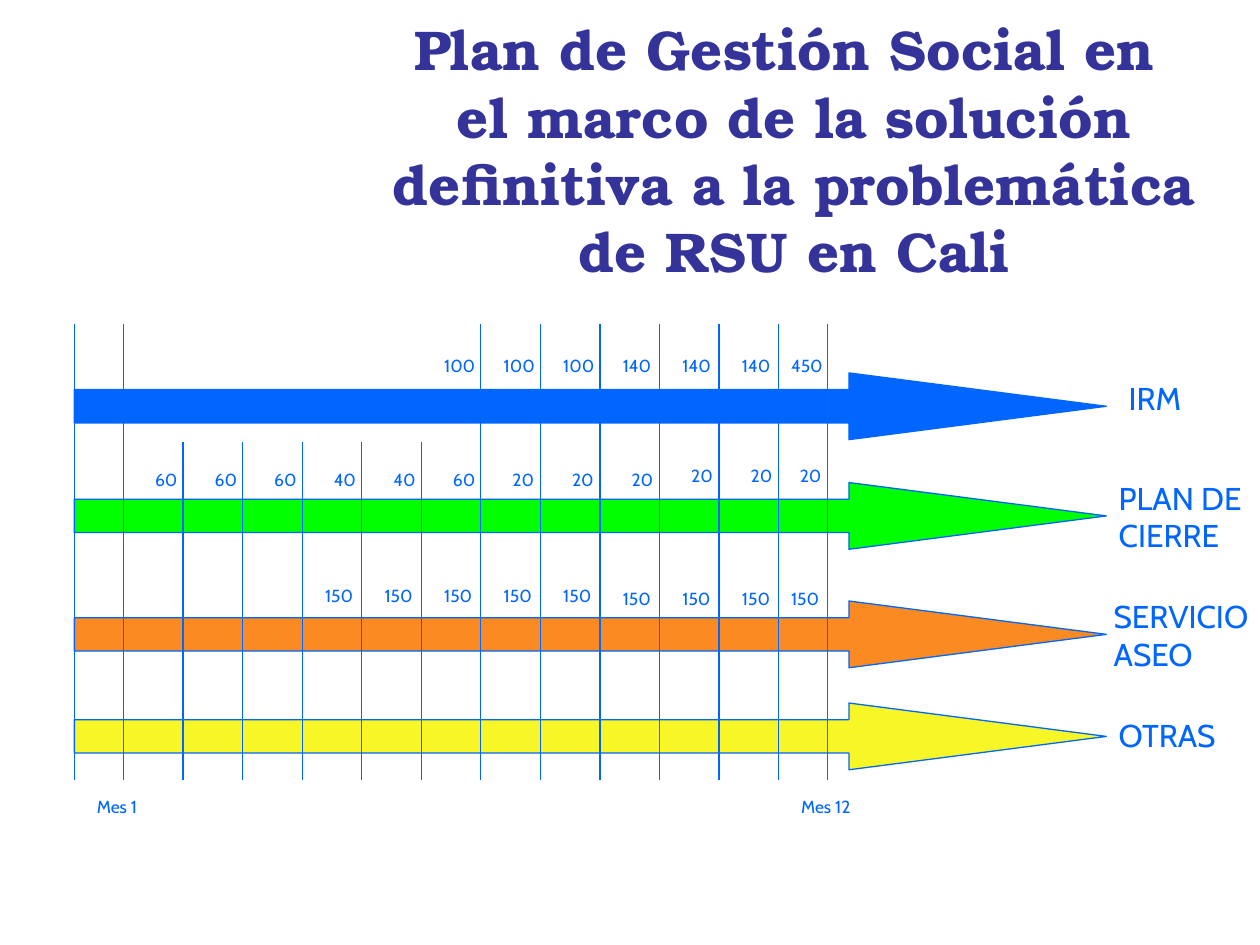
from lxml.etree import SubElement
from pptx import Presentation
from pptx.dml.color import RGBColor
from pptx.enum.shapes import MSO_CONNECTOR, MSO_SHAPE
from pptx.enum.text import MSO_ANCHOR, PP_ALIGN
from pptx.oxml.ns import qn
from pptx.util import Inches, Pt

BLUE, RED, NAVY = "0066FF", "DC1867", "333399"
LAST_LINE = 13
CHART_TOP, LOWER_TOP, CHART_BOTTOM = 2.57, 3.51, 6.19
ARROW_LEFT = 0.59

# Arrow top, fill, label, label left, label top, label width, label height
ARROWS = [
    (2.96, "0066FF", "IRM", 8.86, 2.96, 0.94, 0.4),
    (3.83, "00FF00", "PLAN DE CIERRE", 8.78, 3.75, 1.22, 0.7),
    (4.77, "FB8A23", "SERVICIO ASEO", 8.74, 4.69, 1.46, 0.7),
    (5.58, "F7F727", "OTRAS", 8.78, 5.63, 0.97, 0.4),
]

# First month line, values, usual top, first line with the other top, other top
VALUE_ROWS = [
    (7, [100] * 3 + [140] * 3 + [450], 2.77, 14, 2.77),
    (2, [60] * 3 + [40] * 2 + [60] + [20] * 6, 3.67, 11, 3.64),
    (5, [150] * 9, 4.59, 10, 4.62),
]


def color(hex_string):
    return RGBColor.from_string(hex_string)


def month_x(line):
    """Left position of a month line: even steps between narrower end columns."""
    if line == 0:
        return ARROW_LEFT
    if line == LAST_LINE:
        return 6.57
    return 0.98 + (line - 1) * 5.2 / 11


class SlideBuilder:
    """Holds the shared style and the slide being drawn; lengths are in inches."""

    font = "Cabin"
    line_width = Pt(0.75)

    def __init__(self, presentation):
        self.slide = presentation.slides.add_slide(presentation.slide_layouts[6])
        self.shapes = self.slide.shapes

    def text(self, words, left, top, width, height, size, wrap=True):
        box = self.shapes.add_textbox(*map(Inches, (left, top, width, height)))
        frame = box.text_frame
        frame.word_wrap = wrap
        frame.text = words
        font = frame.paragraphs[0].font
        font.name, font.size = self.font, Pt(size)
        font.color.rgb = color(BLUE)
        return frame

    def title(self, lines):
        frame = self.text("\v".join(lines), 2.8, 0.59, 7.01, 1.19, 32)
        frame.vertical_anchor = MSO_ANCHOR.MIDDLE
        paragraph = frame.paragraphs[0]
        paragraph.alignment = PP_ALIGN.CENTER
        paragraph.font.name = "TeX Gyre Bonum"
        paragraph.font.bold = True
        paragraph.font.color.rgb = color(NAVY)

    def arrow(self, top, fill):
        shape = self.shapes.add_shape(
            MSO_SHAPE.RIGHT_ARROW, *map(Inches, (ARROW_LEFT, top, 8.19, 0.53)))
        shape.adjustments[0], shape.adjustments[1] = 0.5, 3.855
        shape.shadow.inherit = False
        shape.fill.solid()
        shape.fill.fore_color.rgb = color(fill)
        shape.line.color.rgb = color(BLUE)
        shape.line.width = self.line_width

    def month_line(self, x, top, line_color):
        connector = self.shapes.add_connector(
            MSO_CONNECTOR.STRAIGHT, *map(Inches, (x, top, x, CHART_BOTTOM)))
        connector.line.color.rgb = color(line_color)
        connector.line.width = self.line_width
        SubElement(connector._element.spPr, qn("a:effectLst"))

    def value(self, number, line, top):
        """Writes a number just left of its month line."""
        width, offset = (0.79, 0.39) if number >= 100 else (0.63, 0.32)
        self.text(str(number), month_x(line) - offset, top, width, 0.27, 10)


def main():
    presentation = Presentation()
    presentation.slide_width, presentation.slide_height = Inches(10), Inches(7.5)
    builder = SlideBuilder(presentation)

    builder.title(["Plan de Gestión Social en ", "el marco de la solución",
                   "definitiva a la problemática", "de RSU en Cali"])

    for top, fill, label, *place in ARROWS:
        builder.arrow(top, fill)
        builder.text(label, *place, 18, wrap=" " in label)

    for line in range(LAST_LINE + 1):
        top = LOWER_TOP if 2 <= line <= 6 else CHART_TOP
        builder.month_line(month_x(line), top, RED if line == LAST_LINE else BLUE)

    for first, numbers, usual_top, change, other_top in VALUE_ROWS:
        for line, number in enumerate(numbers, first):
            builder.value(number, line, usual_top if line < change else other_top)

    for words, left in (("Mes 1", 0.67), ("Mes 12", 6.26)):
        builder.text(words, left, 6.27, 0.71, 0.27, 10)

    presentation.save("out.pptx")


if __name__ == "__main__":
    main()
